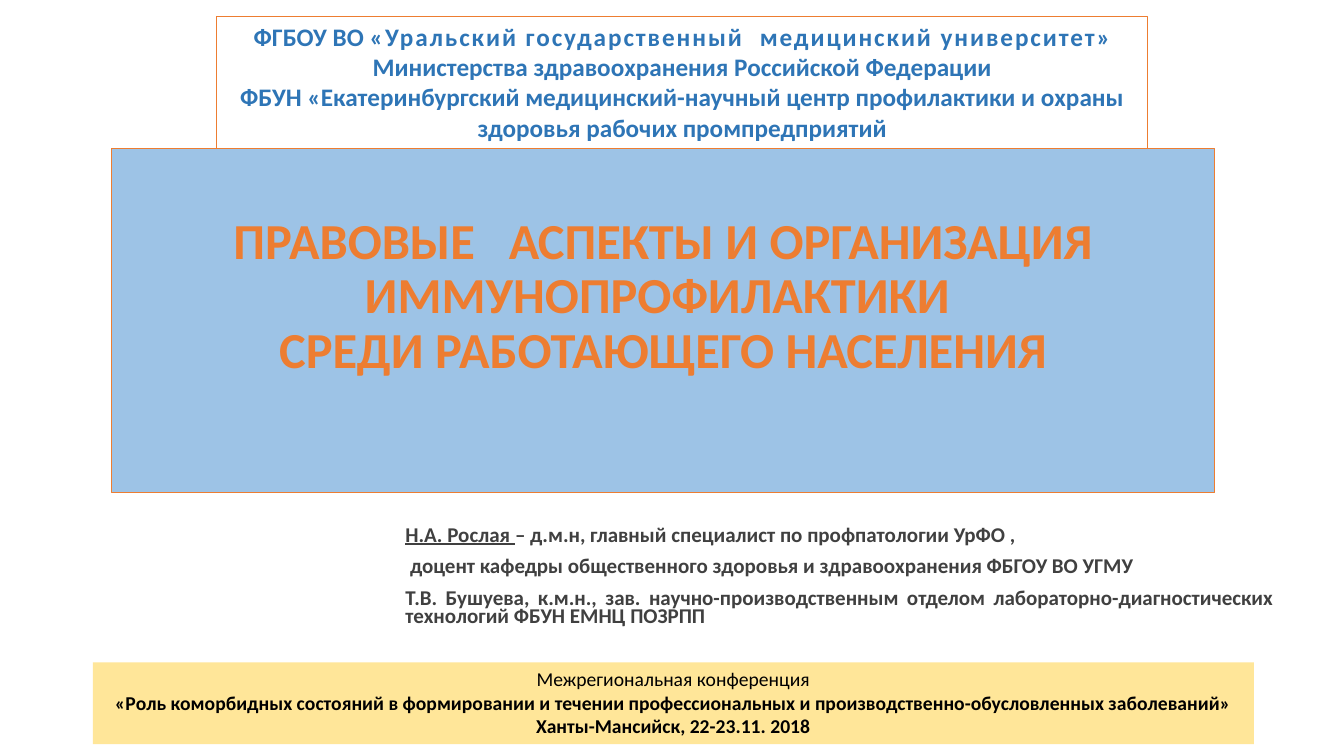
from pptx import Presentation
from pptx.dml.color import RGBColor
from pptx.enum.shapes import MSO_SHAPE as Shape
from pptx.enum.text import MSO_ANCHOR as Anchor, MSO_AUTO_SIZE as AutoSize, PP_ALIGN as Align
from pptx.util import Cm, Pt

ORANGE = RGBColor(0xED, 0x7D, 0x31)
LIGHT_BLUE = RGBColor(0x9D, 0xC3, 0xE6)
BLUE = RGBColor(0x2E, 0x75, 0xB6)
YELLOW = RGBColor(0xFF, 0xE6, 0x99)
GREY = RGBColor(0x40, 0x40, 0x40)
BLACK = RGBColor(0x00, 0x00, 0x00)


def place(s, left, top, width, height):
    s.left, s.top, s.width, s.height = Cm(left), Cm(top), Cm(width), Cm(height)


def paint(s, fill=None, line=None):
    if fill is None:
        s.fill.background()
    else:
        s.fill.solid()
        s.fill.fore_color.rgb = fill
    if line is None:
        s.line.fill.background()
    else:
        s.line.color.rgb = line
        s.line.width = Pt(0.75)


def add_run(p, text, size, color, bold=True, underline=False, spacing=0):
    """Add a run; spacing is the extra width of each character in points."""
    r = p.add_run()
    r.text = text
    font = r.font
    font.name, font.size, font.bold = "Calibri", Pt(size), bold
    font.underline = underline
    font.color.rgb = color
    if spacing:
        r._r.get_or_add_rPr().set("spc", str(round(spacing * 100)))


def write(s, paragraphs, size, color, align=Align.CENTER, anchor=Anchor.TOP,
          line_spacing=1.0, gap=0):
    """Fill a shape; each paragraph is a list of (text, run options)."""
    tf = s.text_frame
    tf.word_wrap = True
    tf.auto_size = AutoSize.NONE
    tf.vertical_anchor = anchor
    for i, runs in enumerate(paragraphs):
        p = tf.add_paragraph() if i else tf.paragraphs[0]
        p.alignment, p.line_spacing = align, line_spacing
        p.space_before = Pt(gap if i else 0)
        for text, options in runs:
            add_run(p, text, size, color, **options)
    return tf


def add_box(slide, position, fill=None, line=None):
    s = slide.shapes.add_shape(Shape.RECTANGLE, *map(Cm, position))
    s.shadow.inherit = False
    paint(s, fill, line)
    return s


def add_title(slide):
    s = slide.shapes.title
    place(s, 2.82, 3.73, 27.79, 8.69)
    paint(s, LIGHT_BLUE, ORANGE)
    tf = write(s, [
        [("ПРАВОВЫЕ", {}), (" ", {"spacing": 16}),
         ("АСПЕКТЫ И ОРГАНИЗАЦИЯ ИММУНОПРОФИЛАКТИКИ ", {})],
        [("СРЕДИ РАБОТАЮЩЕГО НАСЕЛЕНИЯ", {})],
    ], 36, ORANGE, anchor=Anchor.BOTTOM, line_spacing=0.9)
    tf.margin_bottom = Cm(2.87)


def add_authors(slide):
    s = slide.placeholders[1]
    place(s, 9.96, 13.18, 22.4, 2.95)
    tf = write(s, [
        [("Н.А. Рослая ", {"underline": True}),
         ("– д.м.н, главный специалист по профпатологии УрФО ,", {})],
        [("доцент кафедры общественного здоровья и здравоохранения ФБГОУ ВО УГМУ", {})],
        [("Т.В. Бушуева, к.м.н., зав. научно-производственным отделом "
          "лабораторно-диагностических технологий ФБУН ЕМНЦ ПОЗРПП", {})],
    ], 15, GREY, Align.JUSTIFY, line_spacing=0.7, gap=10)
    tf.paragraphs[1]._p.get_or_add_pPr().set("indent", str(Cm(0.12)))


def add_institutions(slide):
    s = add_box(slide, (5.46, 0.41, 23.47, 3.33), line=ORANGE)
    write(s, [
        [("ФГБОУ ВО ", {}), ("«Уральский государственный", {"spacing": 1.4}),
         (" ", {"spacing": 6.9}), ("медицинский университет»", {"spacing": 1.4})],
        [("Министерства здравоохранения Российской Федерации", {})],
        [("ФБУН «Екатеринбургский медицинский-научный центр профилактики "
          "и охраны здоровья рабочих промпредприятий", {})],
    ], 18, BLUE)


def add_conference(slide):
    s = add_box(slide, (2.34, 16.69, 29.26, 2.06), fill=YELLOW)
    write(s, [
        [("Межрегиональная конференция", {"bold": False})],
        [("«Роль коморбидных состояний в формировании и течении профессиональных "
          "и производственно-обусловленных заболеваний»", {})],
        [("Ханты-Мансийск, 22-23.11. 2018", {})],
    ], 14, BLACK)


def main():
    prs = Presentation()
    prs.slide_width, prs.slide_height = Cm(33.87), Cm(19.05)
    slide = prs.slides.add_slide(prs.slide_layouts[0])
    add_title(slide)
    add_authors(slide)
    add_institutions(slide)
    add_conference(slide)
    prs.save("out.pptx")


if __name__ == "__main__":
    main()
